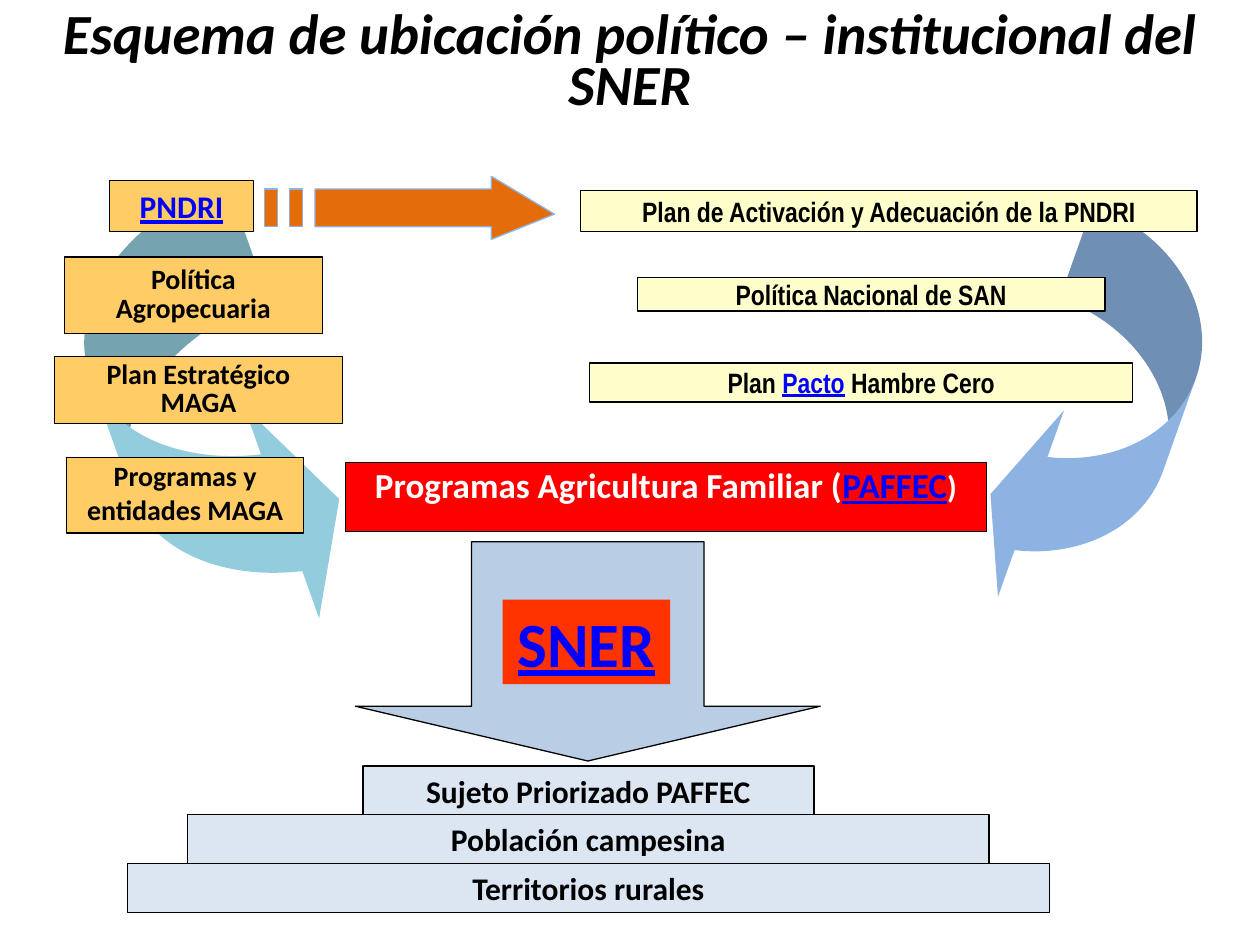
from pptx import Presentation
from pptx.dml.color import RGBColor
from pptx.enum.shapes import MSO_SHAPE as Preset
from pptx.enum.text import MSO_ANCHOR as Anchor, PP_ALIGN as Align
from pptx.util import Inches, Pt

deck = Presentation()
deck.slide_width, deck.slide_height = Inches(10), Inches(7.5)
COL, ROW = deck.slide_width / 100, deck.slide_height / 75
shapes = deck.slides.add_slide(deck.slide_layouts[6]).shapes

BLACK, WHITE, LINK = "000000", "FFFFFF", "0000FF"
AMBER, CREAM, PALE = "FFCC66", "FFFFCC", "DCE6F2"


def paint(shape, fill, line=None):
    shape.shadow.inherit = False
    shape.fill.solid()
    shape.fill.fore_color.rgb = RGBColor.from_string(fill)
    if line:
        shape.line.color.rgb = RGBColor.from_string(line)
        shape.line.width = Pt(0.75)
    else:
        shape.line.fill.background()
    return shape


def write(shape, pieces, size, font="Calibri", spacing=None, after=0, anchor=Anchor.MIDDLE):
    frame = shape.text_frame
    frame.word_wrap = True
    frame.vertical_anchor = anchor
    line = frame.paragraphs[0]
    line.alignment = Align.CENTER
    line.line_spacing = spacing
    line.space_after = Pt(after)
    for text, color in pieces:
        run = line.add_run()
        run.text = text
        run.font.name, run.font.size, run.font.bold = font, Pt(size), True
        run.font.underline = color == LINK
        run.font.color.rgb = RGBColor.from_string(color)
    return line


def_grid = lambda x, y, w, h: (round(x * COL), round(y * ROW), round(w * COL), round(h * ROW))

sner_arrow = shapes.add_shape(Preset.DOWN_ARROW, *def_grid(28.2, 43, 36.9, 17.4))
sner_arrow.adjustments[0], sner_arrow.adjustments[1] = 0.5, 0.25
paint(sner_arrow, "B9CDE5", BLACK)

base_middle, base_top, base_step = 46.7, 60.8, 3.87
base_levels = [("Sujeto Priorizado PAFFEC", 35.8), ("Población campesina", 63.6), ("Territorios rurales", 73.2)]
for level, (label, width) in enumerate(base_levels):
    place = def_grid(base_middle - width / 2, base_top + level * base_step, width, base_step)
    step = paint(shapes.add_shape(Preset.RECTANGLE, *place), PALE, BLACK)
    write(step, [(label, BLACK)], 18, after=10)

curves = [
    ((9, 16, 15.4, 35.6), 340.5, 0.303, "93CDDD", False),
    ((81, 17.4, 12.3, 32.2), 19.5, 0.267, "8DB3E2", True),
]
for place, angle, head, color, mirrored in curves:
    curve = paint(shapes.add_shape(Preset.CURVED_RIGHT_ARROW, *def_grid(*place)), color)
    for index, value in enumerate((0.638, 1.277, head)):
        curve.adjustments[index] = value
    curve.rotation = angle
    if mirrored:
        curve.element.spPr.xfrm.set("flipH", "1")

maga_boxes = [
    ("Política Agropecuaria", (5.1, 20.4, 20.5, 6.1), 0.85),
    ("Plan Estratégico MAGA", (4.3, 28.3, 22.9, 5.3), 0.85),
    ("Programas y entidades MAGA", (5.3, 36.3, 18.8, 6), None),
]
for label, place, spacing in maga_boxes:
    box = paint(shapes.add_shape(Preset.RECTANGLE, *def_grid(*place)), AMBER, BLACK)
    write(box, [(label, BLACK)], 16, spacing=spacing, anchor=Anchor.MIDDLE if spacing else Anchor.TOP)
    if not spacing:
        box.text_frame.margin_top = box.text_frame.margin_bottom = Inches(0.01)

title = shapes.add_textbox(*def_grid(0, 1.9, 100, 6.5))
heading = write(title, [("Esquema de ubicación político – institucional del SNER", BLACK)], 32.4, spacing=0.75)
heading.runs[0].font.italic = True

family = paint(shapes.add_shape(Preset.RECTANGLE, *def_grid(27.4, 36.7, 50.9, 5.5)), "FF0000", BLACK)
family_pieces = [("Programas Agricultura Familiar (", WHITE), ("PAFFEC", LINK), (")", WHITE)]
family_line = write(family, family_pieces, 20, spacing=0.9, anchor=Anchor.TOP)
family_line.runs[-1].font.size = Pt(18)

pndri = paint(shapes.add_shape(Preset.RECTANGLE, *def_grid(8.7, 14.3, 11.4, 4.1)), AMBER, BLACK)
write(pndri, [("PNDRI", LINK)], 18, after=10)

plans = [
    ([("Plan de Activación y Adecuación de la PNDRI", BLACK)], (46.1, 15.1, 48.9, 3.3)),
    ([("Plan ", BLACK), ("Pacto", LINK), (" Hambre Cero", BLACK)], (46.8, 28.8, 43.1, 3.1)),
    ([("Política Nacional de SAN", BLACK)], (50.6, 22, 37.1, 2.7)),
]
for pieces, place in plans:
    plan = paint(shapes.add_shape(Preset.RECTANGLE, *def_grid(*place)), CREAM, BLACK)
    write(plan, pieces, 16, font="Arial Narrow", after=10)

top, upper, middle, lower, bottom = 14.3, 15.4, 16.6, 17.7, 18.8
striped = shapes.build_freeform(38.6, top, scale=(COL, ROW))
striped.add_line_segments(
    [(38.6, upper), (24.9, upper), (24.9, lower), (38.6, lower), (38.6, bottom), (44.4, middle)])
for left, right in ((22.8, 24.2), (21.3, 22)):
    striped.move_to(left, upper)
    striped.add_line_segments([(left, lower), (right, lower), (right, upper)])
paint(striped.convert_to_shape(), "E46C0A", "8DB3E2")

sner = paint(shapes.add_shape(Preset.RECTANGLE, *def_grid(39.9, 47.6, 13.3, 6.7)), "FF3300")
write(sner, [("SNER", LINK)], 36, after=10)

deck.save("out.pptx")
